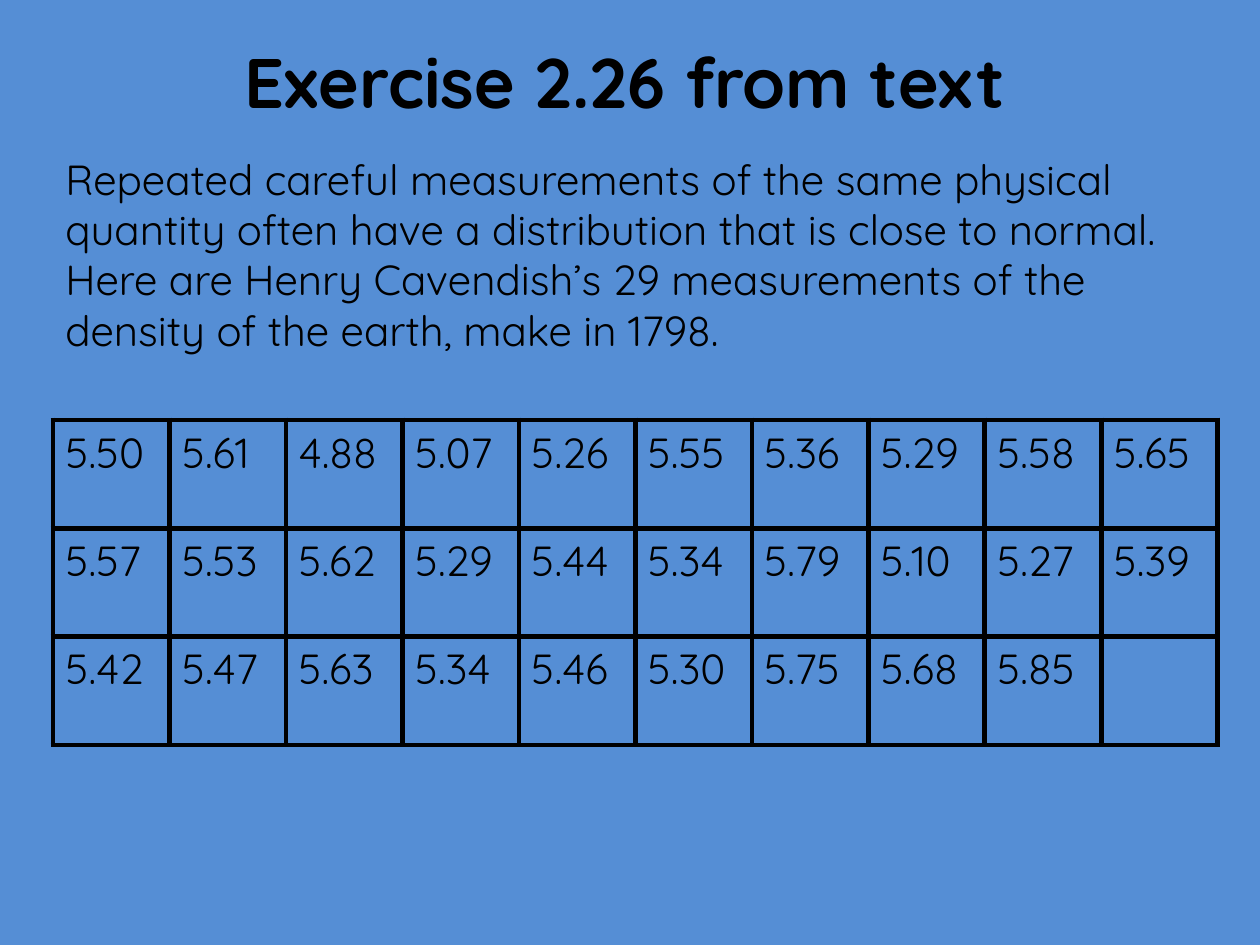
from lxml import etree
from pptx import Presentation
from pptx.dml.color import RGBColor
from pptx.enum.text import MSO_ANCHOR, MSO_AUTO_SIZE, PP_ALIGN
from pptx.oxml.ns import qn
from pptx.util import Emu, Pt

LEFT, CENTER = PP_ALIGN.LEFT, PP_ALIGN.CENTER
TOP = MSO_ANCHOR.TOP
GROW = MSO_AUTO_SIZE.SHAPE_TO_FIT_TEXT
TITLE_ONLY = 5

EMU_PER_PX = 914400 / 126
FONT = "Quicksand"
BLACK = "000000"
BLUE = "558ED5"

INTRO = (
    "Repeated careful measurements of the same physical quantity often have "
    "a distribution that is close to normal. Here are Henry Cavendish’s 29 "
    "measurements of the density of the earth, make in 1798."
)
DENSITIES = [
    "5.50 5.61 4.88 5.07 5.26 5.55 5.36 5.29 5.58 5.65".split(),
    "5.57 5.53 5.62 5.29 5.44 5.34 5.79 5.10 5.27 5.39".split(),
    "5.42 5.47 5.63 5.34 5.46 5.30 5.75 5.68 5.85".split(),
]


def px(length):
    return Emu(round(length * EMU_PER_PX))


def color(value):
    return RGBColor.from_string(value)


def write(frame, text, size=24, bold=False, align=LEFT):
    frame.word_wrap = True
    paragraph = frame.paragraphs[0]
    paragraph.alignment = align
    run = paragraph.add_run()
    run.text = text
    run.font.name = FONT
    run.font.size = Pt(size)
    run.font.bold = bold
    run.font.color.rgb = color(BLACK)


def add_title(slide, text, left, top, width, height):
    title = slide.shapes.title
    title.left, title.top = px(left), px(top)
    title.width, title.height = px(width), px(height)
    title.text_frame.vertical_anchor = TOP
    title.text_frame.auto_size = GROW
    write(title.text_frame, text, size=40, bold=True, align=CENTER)


def add_paragraph(slide, text, left, top, width, height):
    body = slide.shapes.add_textbox(px(left), px(top), px(width), px(height))
    body.text_frame.auto_size = GROW
    write(body.text_frame, text)


def add_borders(cell, width):
    properties = cell._tc.get_or_add_tcPr()
    for side in ("a:lnL", "a:lnR", "a:lnT", "a:lnB"):
        border = etree.SubElement(properties, qn(side), w=str(Pt(width)))
        fill = etree.SubElement(border, qn("a:solidFill"))
        etree.SubElement(fill, qn("a:srgbClr"), val=BLACK)


def add_grid(slide, rows, left, top, width, height):
    column_count = max(len(row) for row in rows)
    grid = slide.shapes.add_table(
        len(rows), column_count, px(left), px(top), px(width), px(height)
    ).table
    grid.first_row = grid.horz_banding = False
    for column in grid.columns:
        column.width = px(width / column_count)
    for row in grid.rows:
        row.height = px(height / len(rows))
    for cell in grid.iter_cells():
        add_borders(cell, 3)
        cell.fill.background()
    for row_index, row in enumerate(rows):
        for column_index, density in enumerate(row):
            write(grid.cell(row_index, column_index).text_frame, density)


def main():
    deck = Presentation()
    deck.slide_width, deck.slide_height = px(1260), px(945)
    slide = deck.slides.add_slide(deck.slide_layouts[TITLE_ONLY])
    slide.background.fill.solid()
    slide.background.fill.fore_color.rgb = color(BLUE)
    add_title(slide, "Exercise 2.26 from text", 53, 32, 1144, 97)
    add_paragraph(slide, INTRO, 53, 147, 1144, 217)
    add_grid(slide, DENSITIES, 53, 420, 1165, 325)
    deck.save("out.pptx")


if __name__ == "__main__":
    main()
